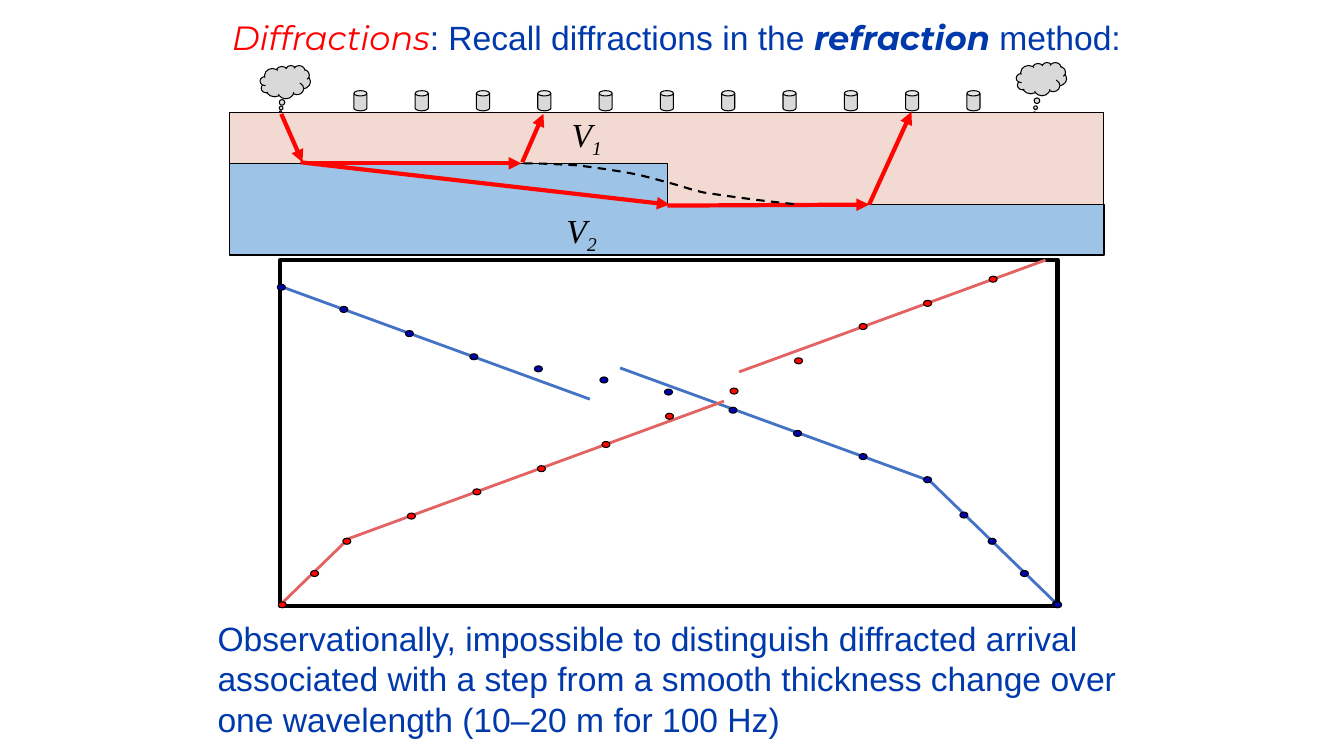
from lxml import etree
from pptx import Presentation
from pptx.dml.color import RGBColor
from pptx.enum.dml import MSO_LINE
from pptx.enum.shapes import MSO_CONNECTOR, MSO_SHAPE
from pptx.enum.text import MSO_ANCHOR, MSO_AUTO_SIZE, PP_ALIGN
from pptx.oxml.ns import qn
from pptx.util import Inches, Pt


class Theme:
    body, accent, math = "Arial", "Montserrat", "Times New Roman"
    size = 24
    blue, red, black = "0039AC", "FF0000", "000000"
    grey, upper, lower = "D9D9D9", "F2D9D2", "9DC3E6"
    ray, red_fit = "FF0501", "E36262"
    blue_dot, blue_fit = "0003AA", "4472C4"
    thin, dash, fit, thick = 0.75, 1.5, 2, 3


# Content: text, font, colour, bold, italic
TITLE = [
    ("Diffractions", Theme.accent, Theme.red, False, True),
    (": Recall diffractions in the ", Theme.body, Theme.blue, False, False),
    ("refraction", Theme.accent, Theme.blue, True, True),
    (" method:", Theme.body, Theme.blue, False, False),
]
CONCLUSION = [
    "Observationally, impossible to distinguish diffracted arrival",
    "associated with a step from a smooth thickness change over",
    "one wavelength (10–20 m for 100 Hz)",
]
VELOCITIES = [("1", 5.57, 1.08), ("2", 5.52, 2.03)]

# Ground section: left, top and callout tip of each shot
SHOTS = [(2.58, 0.65, (-0.094, 0.891)), (10.08, 0.62, (-0.139, 1.016))]
GEOPHONES = dict(count=11, first=3.51, last=9.59, top=0.9)
STEP = [(2.28, 1.62), (6.62, 1.62), (6.62, 2.03), (10.95, 2.03),
        (10.95, 2.53), (2.28, 2.53)]
RAYS = [
    ((2.79, 1.13), (3, 1.61)), ((3.05, 1.62), (5.17, 1.62)),
    ((5.18, 1.61), (5.39, 1.13)), ((2.98, 1.61), (6.64, 2.03)),
    ((6.62, 2.04), (8.62, 2.03)), ((8.62, 2.03), (9.04, 1.11)),
]
# Smooth slope: start, then Bezier triples (control, control, end)
SLOPE_START = (5.2, 1.62)
SLOPE = [
    ((5.37, 1.62), (5.54, 1.63), (5.72, 1.64)),
    ((5.89, 1.66), (6.1, 1.69), (6.26, 1.72)),
    ((6.42, 1.75), (6.54, 1.79), (6.66, 1.82)),
    ((6.78, 1.85), (6.84, 1.88), (6.98, 1.91)),
    ((7.11, 1.93), (7.32, 1.96), (7.48, 1.98)),
    ((7.63, 2), (7.84, 2.02), (7.91, 2.03)),
]

# Travel times: fit colour, fitted lines, dot colour, dot corners
ARRIVALS = [
    (Theme.blue_fit,
     [((10.48, 5.99), (9.18, 4.73)), ((9.22, 4.77), (6.15, 3.65)),
      ((5.85, 3.96), (2.78, 2.84))],
     Theme.blue_dot,
     [(2.75, 2.82), (3.37, 3.04), (4.02, 3.28), (4.66, 3.51), (5.3, 3.63),
      (5.95, 3.74), (6.59, 3.86), (7.23, 4.04), (7.87, 4.27), (8.52, 4.5),
      (9.16, 4.73), (9.52, 5.08), (9.8, 5.34), (10.12, 5.66),
      (10.44, 5.96), (10.45, 5.97)]),
    (Theme.red_fit,
     [((2.78, 6), (3.43, 5.37)), ((3.44, 5.35), (7.18, 3.98)),
      ((7.33, 3.69), (10.37, 2.58))],
     Theme.ray,
     [(2.76, 5.97), (3.08, 5.66), (3.4, 5.34), (4.04, 5.09), (4.69, 4.85),
      (5.33, 4.62), (5.97, 4.38), (6.6, 4.1), (7.24, 3.85), (7.88, 3.55),
      (8.52, 3.21), (9.16, 2.98), (9.81, 2.74)]),
]

prs = Presentation()
prs.slide_width, prs.slide_height = Inches(13.33), Inches(7.5)
s = prs.slides.add_slide(prs.slide_layouts[5])


def rgb(value):
    return RGBColor.from_string(value)


def style(sp, fill=None, width=Theme.thin):
    sp.shadow.inherit = False
    if fill:
        sp.fill.solid()
        sp.fill.fore_color.rgb = rgb(fill)
    else:
        sp.fill.background()
    sp.line.color.rgb = rgb(Theme.black)
    sp.line.width = Pt(width)
    return sp


def add_preset(kind, x, y, w, h, fill=None, width=Theme.thin, adj=()):
    sp = s.shapes.add_shape(kind, *map(Inches, (x, y, w, h)))
    for i, value in enumerate(adj):
        sp.adjustments[i] = value
    return style(sp, fill, width)


def add_outline(points, close, fill=None, width=Theme.thin):
    pts = [(Inches(x), Inches(y)) for x, y in points]
    builder = s.shapes.build_freeform(*pts[0])
    builder.add_line_segments(pts[1:], close=close)
    return style(builder.convert_to_shape(), fill, width)


def add_line(start, end, color, width, arrow=False):
    c = s.shapes.add_connector(MSO_CONNECTOR.STRAIGHT,
                               *map(Inches, (*start, *end)))
    c.line.color.rgb = rgb(color)
    c.line.width = Pt(width)
    if arrow:
        etree.SubElement(c.line._get_or_add_ln(), qn("a:tailEnd"), type="triangle")
    etree.SubElement(c._element.spPr, qn("a:effectLst"))


def add_text(x, y, w, h):
    tf = s.shapes.add_textbox(*map(Inches, (x, y, w, h))).text_frame
    tf.word_wrap = False
    return tf


def set_font(font, name, color, bold=False, italic=False):
    font.name, font.size = name, Pt(Theme.size)
    font.bold, font.italic = bold, italic
    font.color.rgb = rgb(color)


def bezier(p0, p1, p2, p3, t):
    u = 1 - t
    return tuple(u**3 * a + 3 * u * u * t * b + 3 * u * t * t * c + t**3 * d
                 for a, b, c, d in zip(p0, p1, p2, p3))


# Title
title = s.shapes.title
title.left, title.top, title.width, title.height = map(
    Inches, (2.2, 0.12, 9.35, 0.5))
tf = title.text_frame
tf.word_wrap, tf.auto_size = False, MSO_AUTO_SIZE.NONE
tf.vertical_anchor = MSO_ANCHOR.TOP
p = tf.paragraphs[0]
p.alignment = PP_ALIGN.LEFT
for text, *look in TITLE:
    r = p.add_run()
    r.text = text
    set_font(r.font, *look)

# Shots and geophones on the surface
for x, y, tip in SHOTS:
    add_preset(MSO_SHAPE.CLOUD_CALLOUT, x, y, 0.5, 0.33, Theme.grey, adj=tip)
pitch = (GEOPHONES["last"] - GEOPHONES["first"]) / (GEOPHONES["count"] - 1)
for i in range(GEOPHONES["count"]):
    add_preset(MSO_SHAPE.CAN, GEOPHONES["first"] + i * pitch, GEOPHONES["top"],
               0.13, 0.2, Theme.grey, adj=(0.404,))

# Layers and their velocities
add_preset(MSO_SHAPE.RECTANGLE, 2.28, 1.12, 8.67, 0.92, Theme.upper)
add_outline(STEP, True, Theme.lower)
for index, x, y in VELOCITIES:
    p = add_text(x, y, 0.52, 0.5).paragraphs[0]
    set_font(p.font, Theme.math, Theme.black, italic=True)
    p.add_run().text = "V"
    r = p.add_run()
    r.text = index
    r._r.get_or_add_rPr().set("baseline", "-25000")

# Ray paths
for start, end in RAYS:
    add_line(start, end, Theme.ray, Theme.thick, arrow=True)

# Travel-time plot
add_preset(MSO_SHAPE.RECTANGLE, 2.78, 2.58, 7.71, 3.43, width=Theme.thick)
for fit_color, fits, dot_color, dots in ARRIVALS:
    for start, end in fits:
        add_line(start, end, fit_color, Theme.fit)
    for x, y in dots:
        add_preset(MSO_SHAPE.OVAL, x, y, 0.08, 0.06, dot_color)

# Conclusion
tf = add_text(2.06, 6.08, 9.2, 1.31)
for i, text in enumerate(CONCLUSION):
    p = tf.add_paragraph() if i else tf.paragraphs[0]
    p.text = text
    set_font(p.font, Theme.body, Theme.blue)

# Dashed smooth slope
curve = [SLOPE_START]
for triple in SLOPE:
    origin = curve[-1]
    curve += [bezier(origin, *triple, k / 4) for k in range(1, 5)]
slope = add_outline(curve, False, width=Theme.dash)
slope.line.dash_style = MSO_LINE.DASH

prs.save("out.pptx")
